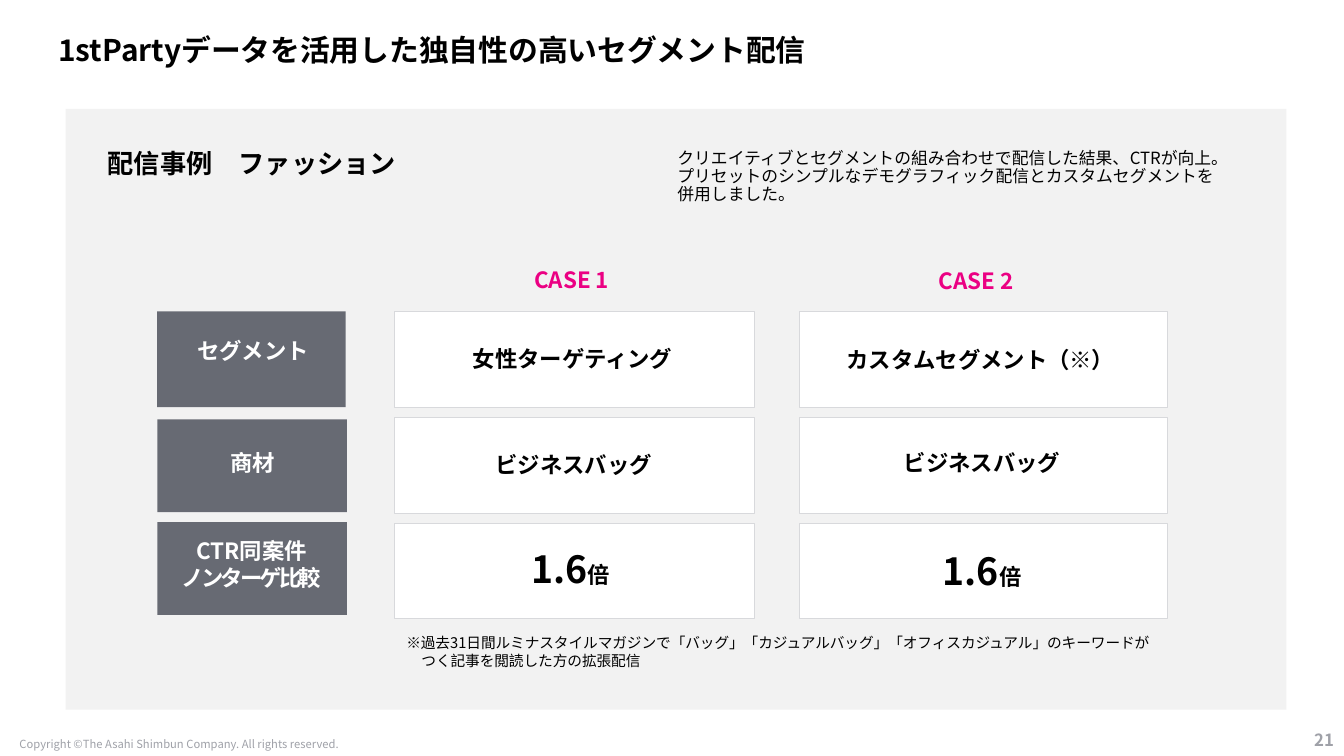
from dataclasses import dataclass

from lxml.etree import SubElement
from pptx import Presentation
from pptx.dml.color import RGBColor
from pptx.enum.shapes import MSO_SHAPE
from pptx.enum.text import MSO_ANCHOR, MSO_AUTO_SIZE, PP_ALIGN
from pptx.oxml.ns import qn
from pptx.slide import Slide
from pptx.util import Inches, Pt

FONT = "Noto Sans CJK JP"
COLORS = {
    "black": "000000",
    "white": "FFFFFF",
    "panel": "F2F2F2",
    "label": "676A73",
    "border": "D8D9DC",
    "case": "EB0083",
    "footer": "9FA1A8",
}
DEFAULT_INSETS = (0.1, 0.05)
CELL_INSETS = (0.13, 0.07)
WIDE_INSETS = (0.13, 0.13)
ROW_TOP, ROW_PITCH, ROW_HEIGHT = 3.09, 1.05, 0.95
CASE_COLUMNS = ((3.91, 3.57), (7.93, 3.65))


@dataclass(frozen=True)
class Block:
    left: float
    top: float
    width: float
    height: float
    fill: str
    border: str | None = None


@dataclass(frozen=True)
class Caption:
    left: float
    top: float
    width: float
    height: float
    lines: tuple[str, ...]
    size: float = 16
    color: str = "black"
    bold: bool = True
    align: PP_ALIGN = PP_ALIGN.CENTER
    anchor: MSO_ANCHOR = MSO_ANCHOR.TOP
    insets: tuple[float, float] = DEFAULT_INSETS
    spacing: float | None = None
    grow: bool = True
    unit: str = ""
    second_line_indent: float = 0
    second_line_tracking: int = 0


def rgb(name: str) -> RGBColor:
    return RGBColor.from_string(COLORS[name])


def draw_block(slide: Slide, block: Block) -> None:
    rect = slide.shapes.add_shape(
        MSO_SHAPE.RECTANGLE,
        Inches(block.left), Inches(block.top), Inches(block.width), Inches(block.height),
    )
    rect.shadow.inherit = False
    rect.fill.solid()
    rect.fill.fore_color.rgb = rgb(block.fill)
    if block.border:
        rect.line.color.rgb = rgb(block.border)
        rect.line.width = Pt(0.75)
    else:
        rect.line.fill.background()


def draw_caption(slide: Slide, caption: Caption) -> None:
    frame = slide.shapes.add_textbox(
        Inches(caption.left), Inches(caption.top), Inches(caption.width), Inches(caption.height)
    ).text_frame
    frame.word_wrap = True
    frame.auto_size = MSO_AUTO_SIZE.SHAPE_TO_FIT_TEXT if caption.grow else MSO_AUTO_SIZE.NONE
    frame.vertical_anchor = caption.anchor
    frame.margin_left = frame.margin_right = Inches(caption.insets[0])
    frame.margin_top = frame.margin_bottom = Inches(caption.insets[1])
    for index, line in enumerate(caption.lines):
        paragraph = frame.paragraphs[0] if index == 0 else frame.add_paragraph()
        paragraph.alignment = caption.align
        paragraph.line_spacing = caption.spacing
        font = paragraph.font
        font.size = Pt(caption.size)
        font.bold = caption.bold
        font.color.rgb = rgb(caption.color)
        font.name = FONT
        properties = paragraph._p.get_or_add_pPr()
        SubElement(properties.find(qn("a:defRPr")), qn("a:ea"), typeface=FONT)
        run = paragraph.add_run()
        run.text = line
        if caption.unit:
            unit = paragraph.add_run()
            unit.text = caption.unit
            unit.font.size = Pt(16)
        if index == 1 and caption.second_line_indent:
            properties.set("marL", str(Inches(caption.second_line_indent)))
        if index == 1 and caption.second_line_tracking:
            run._r.get_or_add_rPr().set("spc", str(caption.second_line_tracking))


PANEL = Block(0.65, 1.08, 12.11, 5.96, "panel")
LABEL_BLOCKS = [
    Block(1.56, 3.09, 1.87, 0.95, "label"),
    Block(1.56, 4.16, 1.88, 0.92, "label"),
    Block(1.56, 5.18, 1.88, 0.92, "label"),
]
CASE_BLOCKS = [
    Block(left, ROW_TOP + row * ROW_PITCH, width, ROW_HEIGHT, "white", "border")
    for row in range(3)
    for left, width in CASE_COLUMNS
]
CAPTIONS = [
    Caption(0.58, 0.39, 9.96, 0.24, ("1stPartyデータを活用した独自性の高いセグメント配信",), 21.3,
            align=PP_ALIGN.LEFT, anchor=MSO_ANCHOR.MIDDLE, insets=(0, 0), spacing=0.9),
    Caption(0.97, 1.45, 5.33, 0.41, ("配信事例　ファッション",), 18.7,
            align=PP_ALIGN.LEFT, spacing=0.9, grow=False),
    Caption(6.62, 1.44, 5.62, 0.77,
            ("クリエイティブとセグメントの組み合わせで配信した結果、CTRが向上。"
             "プリセットのシンプルなデモグラフィック配信とカスタムセグメントを併用しました。",),
            12, bold=False, align=PP_ALIGN.LEFT, spacing=0.9, grow=False),
    Caption(3.91, 2.51, 3.52, 0.52, ("CASE 1",), color="case", insets=WIDE_INSETS, grow=False),
    Caption(7.88, 2.52, 3.6, 0.53, ("CASE 2",), color="case", insets=WIDE_INSETS, grow=False),
    Caption(1.58, 3.3, 1.86, 0.37, ("セグメント",), color="white"),
    Caption(3.9, 3.35, 3.56, 0.4, ("女性ターゲティング",), insets=CELL_INSETS),
    Caption(7.97, 3.36, 3.51, 0.4, ("カスタムセグメント（※）",), insets=CELL_INSETS),
    Caption(1.58, 4.39, 1.86, 0.4, ("商材",), color="white", insets=CELL_INSETS),
    Caption(3.91, 4.41, 3.56, 0.4, ("ビジネスバッグ",), insets=CELL_INSETS),
    Caption(7.92, 4.39, 3.64, 0.4, ("ビジネスバッグ",), insets=CELL_INSETS),
    Caption(1.56, 5.28, 1.87, 0.64, ("CTR同案件", "ノンターゲ比較"), color="white",
            second_line_tracking=-200),
    Caption(3.89, 5.35, 3.54, 0.58, ("1.6",), 26.7, insets=CELL_INSETS, unit="倍"),
    Caption(7.92, 5.37, 3.64, 0.58, ("1.6",), 26.7, insets=CELL_INSETS, unit="倍"),
    Caption(3.9, 6.16, 8.05, 0.64,
            ("※過去31日間ルミナスタイルマガジンで「バッグ」「カジュアルバッグ」"
             "「オフィスカジュアル」のキーワードが",
             "つく記事を閲読した方の拡張配信"),
            10.5, bold=False, align=PP_ALIGN.LEFT, insets=WIDE_INSETS, second_line_indent=0.15),
    Caption(0.09, 7.3, 3.38, 0.17, ("Copyright ©The Asahi Shimbun Company. All rights reserved.",),
            8, "footer", False, anchor=MSO_ANCHOR.MIDDLE, grow=False),
    Caption(12.55, 7.17, 0.78, 0.33, ("21",), 12, "footer",
            align=PP_ALIGN.RIGHT, anchor=MSO_ANCHOR.MIDDLE, grow=False),
]


def main() -> None:
    presentation = Presentation()
    presentation.slide_width = Inches(13.33)
    presentation.slide_height = Inches(7.5)
    slide = presentation.slides.add_slide(presentation.slide_layouts[6])
    for block in [PANEL, *LABEL_BLOCKS, *CASE_BLOCKS]:
        draw_block(slide, block)
    for caption in CAPTIONS:
        draw_caption(slide, caption)
    presentation.save("out.pptx")


if __name__ == "__main__":
    main()
